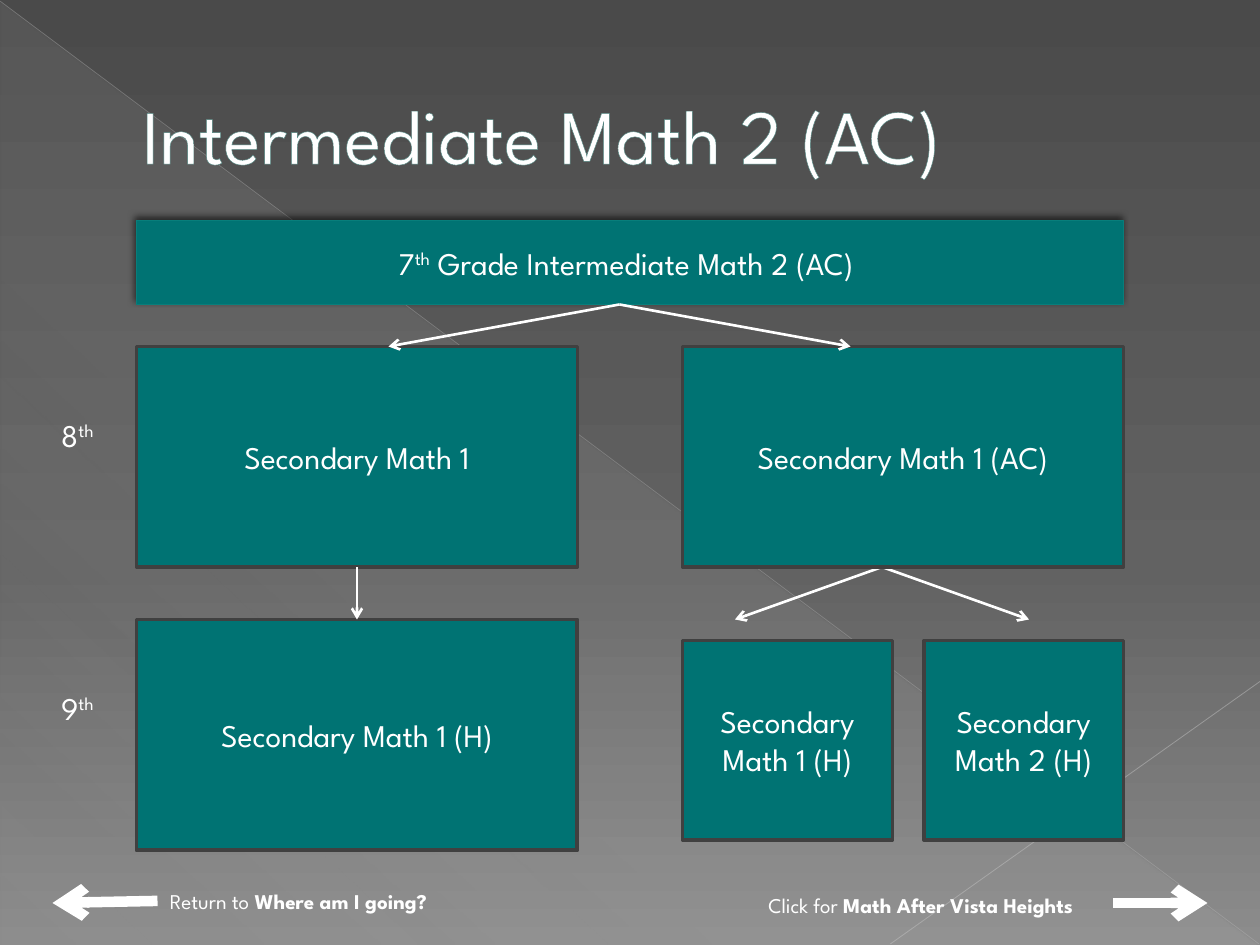
from lxml import etree
from pptx import Presentation
from pptx.dml.color import RGBColor
from pptx.enum.shapes import MSO_CONNECTOR, MSO_SHAPE
from pptx.enum.text import MSO_ANCHOR, MSO_AUTO_SIZE, PP_ALIGN
from pptx.oxml.ns import qn
from pptx.util import Inches, Pt

WHITE = RGBColor(0xFF, 0xFF, 0xFF)
TEAL = RGBColor(0x00, 0x73, 0x73)
TEAL_EDGE = RGBColor(0x08, 0x7E, 0x7B)
TITLE_EDGE = RGBColor(0x52, 0x86, 0x81)
CHARCOAL = RGBColor(0x40, 0x40, 0x40)
BLACK = RGBColor(0x00, 0x00, 0x00)
SILVER = RGBColor(0xD2, 0xD2, 0xD2)
DIAGONAL = RGBColor(0xBF, 0xBF, 0xBF)
CORNER = RGBColor(0xC6, 0xC6, 0xC6)
BACKDROP = [
    (0, RGBColor(0x4A, 0x4A, 0x4A), 100),
    (60, RGBColor(0x62, 0x62, 0x62), 100),
    (100, RGBColor(0x8C, 0x8C, 0x8C), 100),
]
SHEEN = [(0, SILVER, 10), (70, SILVER, 8), (100, SILVER, 1)]

CENTER, LEFT = PP_ALIGN.CENTER, PP_ALIGN.LEFT
MIDDLE, TOP = MSO_ANCHOR.MIDDLE, MSO_ANCHOR.TOP
GROW, FIXED = MSO_AUTO_SIZE.SHAPE_TO_FIT_TEXT, MSO_AUTO_SIZE.NONE
RECTANGLE, TRIANGLE = MSO_SHAPE.RECTANGLE, MSO_SHAPE.RIGHT_TRIANGLE
STRAIGHT = MSO_CONNECTOR.STRAIGHT

PLAIN, BOLD, RAISED = {}, {"bold": True}, {"baseline": 30000}


def add(parent, tag, **attributes):
    child = etree.SubElement(parent, qn(tag))
    for key, value in attributes.items():
        child.set(key, str(value))
    return child


def add_color(parent, color, opacity):
    tint = add(parent, "a:srgbClr", val=color)
    if opacity < 100:
        add(tint, "a:alpha", val=opacity * 1000)


def set_gradient(properties, stops, angle):
    solid = properties.find(qn("a:solidFill"))
    gradient = etree.Element(qn("a:gradFill"), rotWithShape="1")
    stop_list = add(gradient, "a:gsLst")
    for position, color, opacity in stops:
        add_color(add(stop_list, "a:gs", pos=position * 1000), color, opacity)
    add(gradient, "a:lin", ang=angle * 60000, scaled=0)
    properties.replace(solid, gradient)


class MathPathway:
    """Draws course boxes, labels and arrows on a grid of twelve cells to the inch."""

    font = "League Spartan"
    cell = Inches(1) / 12

    def __init__(self, deck):
        self.slide = deck.slides.add_slide(deck.slide_layouts[6])

    def cells(self, *counts):
        return [round(count * self.cell) for count in counts]

    def background(self, stops, angle):
        self.slide.background.fill.solid()
        set_gradient(self.slide.background._cSld.bg.bgPr, stops, angle)

    def letter(self, shape, runs, size, align, anchor, grow=False):
        frame = shape.text_frame
        layout = {
            "word_wrap": True,
            "auto_size": GROW if grow else FIXED,
            "vertical_anchor": anchor,
        }
        for key, value in layout.items():
            setattr(frame, key, value)
        paragraph = frame.paragraphs[0]
        paragraph.alignment = align
        for words, extras in runs:
            run = paragraph.add_run()
            run.text = words
            run.font.color.rgb = WHITE
            look = {"name": self.font, "size": Pt(size), "bold": extras.get("bold", False)}
            for key, value in look.items():
                setattr(run.font, key, value)
            if "baseline" in extras:
                run._r.get_or_add_rPr().set("baseline", str(extras["baseline"]))
        return paragraph

    def text(self, area, runs, size, align=LEFT, anchor=TOP, grow=True):
        label = self.slide.shapes.add_textbox(*self.cells(*area))
        return self.letter(label, runs, size, align, anchor, grow)

    def title(self, area, words):
        paragraph = self.text(area, [(words, PLAIN)], 44, LEFT, MIDDLE, False)
        properties = paragraph._p.get_or_add_pPr()
        properties.set("marL", str(Inches(0.53)))
        properties.set("indent", "0")
        outline = etree.Element(qn("a:ln"), w=str(Pt(0.5)))
        add_color(add(outline, "a:solidFill"), TITLE_EDGE, 100)
        paragraph.runs[0]._r.get_or_add_rPr().insert(0, outline)

    def sheen(self, area, stops, angle):
        triangle = self.slide.shapes.add_shape(TRIANGLE, *self.cells(*area))
        triangle.shadow.inherit = False
        triangle.line.fill.background()
        triangle.fill.solid()
        set_gradient(triangle._element.spPr, stops, angle)

    def course(self, area, runs, edge=CHARCOAL, weight=2.0, raised=False):
        box = self.slide.shapes.add_shape(RECTANGLE, *self.cells(*area))
        box.shadow.inherit = False
        box.fill.solid()
        box.fill.fore_color.rgb = TEAL
        box.line.color.rgb = edge
        box.line.width = Pt(weight)
        if raised:
            effects = box._element.spPr.find(qn("a:effectLst"))
            shadow = add(effects, "a:outerShdw", blurRad=Pt(4), dist=Pt(3),
                         dir=245 * 60000, rotWithShape=0)
            add_color(shadow, BLACK, 60)
        self.letter(box, runs, 18, CENTER, MIDDLE)

    def line(self, start, end, color=WHITE, weight=1.5, opacity=100, arrow=True):
        stroke = self.slide.shapes.add_connector(STRAIGHT, *self.cells(*start, *end))
        stroke.line.color.rgb = color
        stroke.line.width = Pt(weight)
        outline = stroke._element.spPr.find(qn("a:ln"))
        if opacity < 100:
            add(outline.find(".//" + qn("a:srgbClr")), "a:alpha", val=opacity * 1000)
        if arrow:
            add(outline, "a:tailEnd", type="arrow")
        add(stroke._element.spPr, "a:effectLst")


def main():
    deck = Presentation()
    deck.slide_width, deck.slide_height = Inches(10), Inches(7.5)
    page = MathPathway(deck)
    page.background(BACKDROP, 90)
    page.sheen((0.1, 0.2, 119.8, 89.8), SHEEN, 133)
    page.line((0, 0.1), (119.9, 89.9), DIAGONAL, 0.39, 35, False)
    page.line((120, 64.9), (84.8, 89.9), CORNER, 0.47, 45, False)
    page.title((6, 3.5, 108, 18.4), "Intermediate Math 2 (AC)")

    left, right, wide = 13, 65, 42
    eighth, ninth = 33, 59
    page.course((left, ninth, wide, 22), [("Secondary Math 1 (H)", PLAIN)], weight=2.25)
    page.course((left, eighth, wide, 21), [("Secondary Math 1", PLAIN)])
    page.course((88, 61, 19, 19), [("Secondary Math 2 (H)", PLAIN)])
    page.course((right, 61, 20, 19), [("Secondary Math 1 (H)", PLAIN)])

    page.line((34, 54), (34, ninth))
    for target in (70, 98):
        page.line((84, 54), (target, ninth))
    entry = [("7", PLAIN), ("th", RAISED), (" Grade Intermediate Math 2 (AC) ", PLAIN)]
    page.course((left, 21, 94, 8), entry, TEAL_EDGE, 0.75, True)
    page.course((right, eighth, wide, 21), [("Secondary Math 1 (AC)", PLAIN)])
    for target in (37, 81):
        page.line((59, 29), (target, eighth))

    for grade, row in ((" 8", 39), (" 9", 65)):
        page.text((3, row, 8, 4.8), [(grade, PLAIN), ("th", RAISED)], 18, CENTER)

    page.line((15, 85.8), (5, 86), weight=6)
    page.text((15, 84, 35, 3.6), [("Return to ", PLAIN), ("Where am I going?", BOLD)], 12)
    page.line((106, 86), (115, 86), weight=6)
    page.text((72, 84.4, 37, 3.6), [("Click for ", PLAIN), ("Math After Vista Heights", BOLD)], 12)
    deck.save("out.pptx")


if __name__ == "__main__":
    main()
